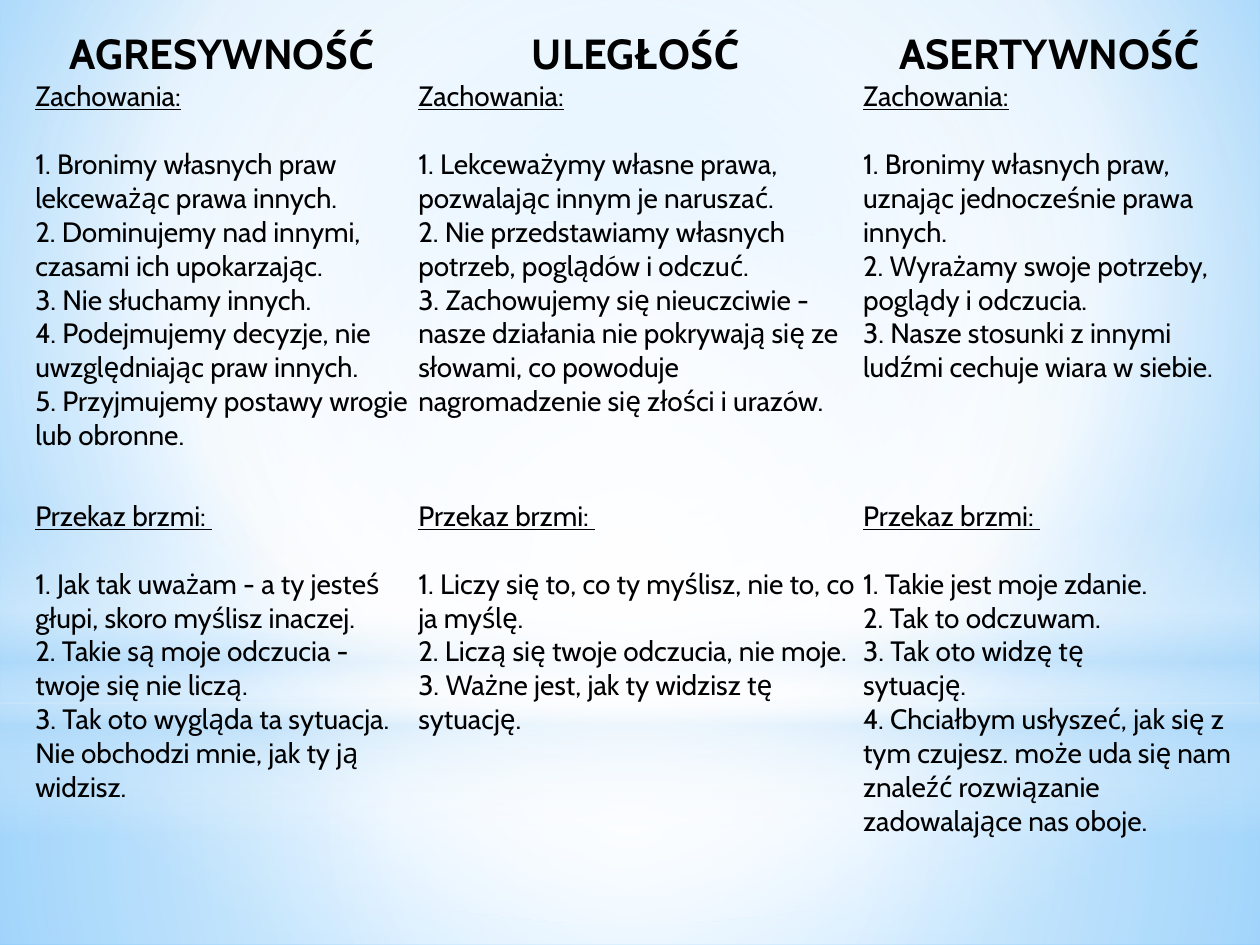
from dataclasses import dataclass

from lxml.etree import SubElement
from pptx import Presentation
from pptx.dml.color import RGBColor
from pptx.enum.shapes import MSO_SHAPE as Shape
from pptx.enum.text import MSO_ANCHOR as Anchor, PP_ALIGN as Align
from pptx.oxml.ns import qn
from pptx.util import Inches, Pt

WIDTH, HEIGHT = 10, 7.5
NO_GRID_STYLE = "{2D5ABB26-0587-4C30-8999-92F81FD0307C}"


@dataclass(frozen=True)
class Theme:
    font: str = "Cabin"
    ink: str = "000000"
    white: str = "FFFFFF"
    haze: str = "B4DCFA"
    sky: str = "9ED5FF"
    deep: str = "5BB9FF"
    title_size: int = 24
    body_size: int = 16
    label_gap: float = 19.4  # one body line


THEME = Theme()
CENTRE = (50, 50, 50, 50)

COLUMN_WIDTHS = (3.04, 3.53, 2.96)
ROW_HEIGHTS = (0.4, 3.33, 2.96)
ATTITUDES = ("AGRESYWNOŚĆ ", "ULEGŁOŚĆ ", "ASERTYWNOŚĆ")
SECTIONS = {
    "Zachowania:": (
        ("Bronimy własnych praw lekceważąc prawa innych.",
         "Dominujemy nad innymi, czasami ich upokarzając.",
         "Nie słuchamy innych.",
         "Podejmujemy decyzje, nie uwzględniając praw innych.",
         "Przyjmujemy postawy wrogie lub obronne."),
        ("Lekceważymy własne prawa, pozwalając innym je naruszać.",
         "Nie przedstawiamy własnych potrzeb, poglądów i odczuć.",
         "Zachowujemy się nieuczciwie - nasze działania nie pokrywają się ze "
         "słowami, co powoduje nagromadzenie się złości i urazów."),
        ("Bronimy własnych praw, uznając jednocześnie prawa innych.",
         "Wyrażamy swoje potrzeby, poglądy i odczucia.",
         "Nasze stosunki z innymi ludźmi cechuje wiara w siebie."),
    ),
    "Przekaz brzmi: ": (
        ("Jak tak uważam - a ty jesteś głupi, skoro myślisz inaczej.",
         "Takie są moje odczucia - twoje się nie liczą.",
         "Tak oto wygląda ta sytuacja. Nie obchodzi mnie, jak ty ją widzisz."),
        ("Liczy się to, co ty myślisz, nie to, co ja myślę.",
         "Liczą się twoje odczucia, nie moje.",
         "Ważne jest, jak ty widzisz tę sytuację."),
        ("Takie jest moje zdanie.",
         "Tak to odczuwam.",
         "Tak oto widzę tę \vsytuację.",
         "Chciałbym usłyszeć, jak się z tym czujesz. może uda się nam "
         "znaleźć rozwiązanie zadowalające nas oboje."),
    ),
}


def set_gradient(fill, owner, stops, focus=None):
    """Stops are (position, colour, opacity); no focus means top to bottom."""
    fill.gradient()
    gradient = next(owner.iter(qn("a:gradFill")))
    for child in list(gradient):
        gradient.remove(child)
    stop_list = SubElement(gradient, qn("a:gsLst"))
    for position, colour, opacity in stops:
        stop = SubElement(stop_list, qn("a:gs"), pos=str(position * 1000))
        tint = SubElement(stop, qn("a:srgbClr"), val=colour)
        if opacity < 100:
            SubElement(tint, qn("a:alpha"), val=str(opacity * 1000))
    if focus is None:
        SubElement(gradient, qn("a:lin"), ang="5400000", scaled="0")
        return
    circle = SubElement(gradient, qn("a:path"), path="circle")
    sides = {side: str(share * 1000) for side, share in zip("ltrb", focus)}
    SubElement(circle, qn("a:fillToRect"), **sides)


def add_glow(slide, kind, top, height, stops, focus=CENTRE):
    """Full-width soft layer; top and height are shares of the slide height."""
    glow = slide.shapes.add_shape(kind, 0, Inches(top * HEIGHT),
                                  Inches(WIDTH), Inches(height * HEIGHT))
    glow.shadow.inherit = False
    glow.line.fill.background()
    set_gradient(glow.fill, glow.element, stops, focus)


def write(frame, text, *, first=False, size=THEME.body_size, bold=False,
          underline=False, align=Align.LEFT, after=0):
    line = frame.paragraphs[0] if first else frame.add_paragraph()
    line.text = text
    line.alignment = align
    line.space_after = Pt(after)
    for run in line.runs:
        font = run.font
        font.name, font.size = THEME.font, Pt(size)
        font.bold, font.underline = bold, underline
        font.color.rgb = RGBColor.from_string(THEME.ink)


def add_backdrop(slide):
    white, haze = THEME.white, THEME.haze
    set_gradient(slide.background.fill, slide.element,
                 [(0, THEME.sky, 100), (60, white, 100), (100, THEME.deep, 100)],
                 (20, 10, 20, 60))
    # floor, wall, horizon band and central light
    add_glow(slide, Shape.RECTANGLE, 0.744, 0.256,
             [(0, white, 91), (37, white, 76), (100, haze, 79)])
    add_glow(slide, Shape.RECTANGLE, 0, 0.744,
             [(0, white, 89), (48, white, 62), (100, haze, 79)])
    add_glow(slide, Shape.RECTANGLE, 0.55, 0.333,
             [(0, white, 0), (29, white, 30), (45, haze, 40),
              (55, white, 26), (65, haze, 60), (100, white, 0)], None)
    add_glow(slide, Shape.OVAL, 0.233, 0.744,
             [(0, white, 100), (56, white, 0)])


def add_grid(slide):
    grid = slide.shapes.add_table(
        len(ROW_HEIGHTS), len(COLUMN_WIDTHS), Inches(0.28), Inches(0.23),
        Inches(sum(COLUMN_WIDTHS)), Inches(sum(ROW_HEIGHTS))).table
    grid.first_row = grid.horz_banding = False
    next(grid._tbl.iter(qn("a:tableStyleId"))).text = NO_GRID_STYLE
    for column, width in zip(grid.columns, COLUMN_WIDTHS):
        column.width = Inches(width)
    for row, height in zip(grid.rows, ROW_HEIGHTS):
        row.height = Inches(height)
    for cell in grid.iter_cells():
        cell.fill.background()
        cell.margin_left = cell.margin_right = 0
        cell.margin_top = cell.margin_bottom = 0
    return grid


def fill_section(cell, label, statements):
    frame = cell.text_frame
    write(frame, label, first=True, underline=True, after=THEME.label_gap)
    for number, statement in enumerate(statements, 1):
        write(frame, f"{number}. {statement}")


def main():
    deck = Presentation()
    deck.slide_width, deck.slide_height = Inches(WIDTH), Inches(HEIGHT)
    slide = deck.slides.add_slide(deck.slide_layouts[6])
    add_backdrop(slide)

    # comparison of the three attitudes
    grid = add_grid(slide)
    for column, attitude in enumerate(ATTITUDES):
        heading = grid.cell(0, column)
        heading.vertical_anchor = Anchor.MIDDLE
        write(heading.text_frame, attitude, first=True, bold=True,
              size=THEME.title_size, align=Align.CENTER)
    for row, (label, columns) in enumerate(SECTIONS.items(), 1):
        for column, statements in enumerate(columns):
            fill_section(grid.cell(row, column), label, statements)

    deck.save("out.pptx")


if __name__ == "__main__":
    main()
